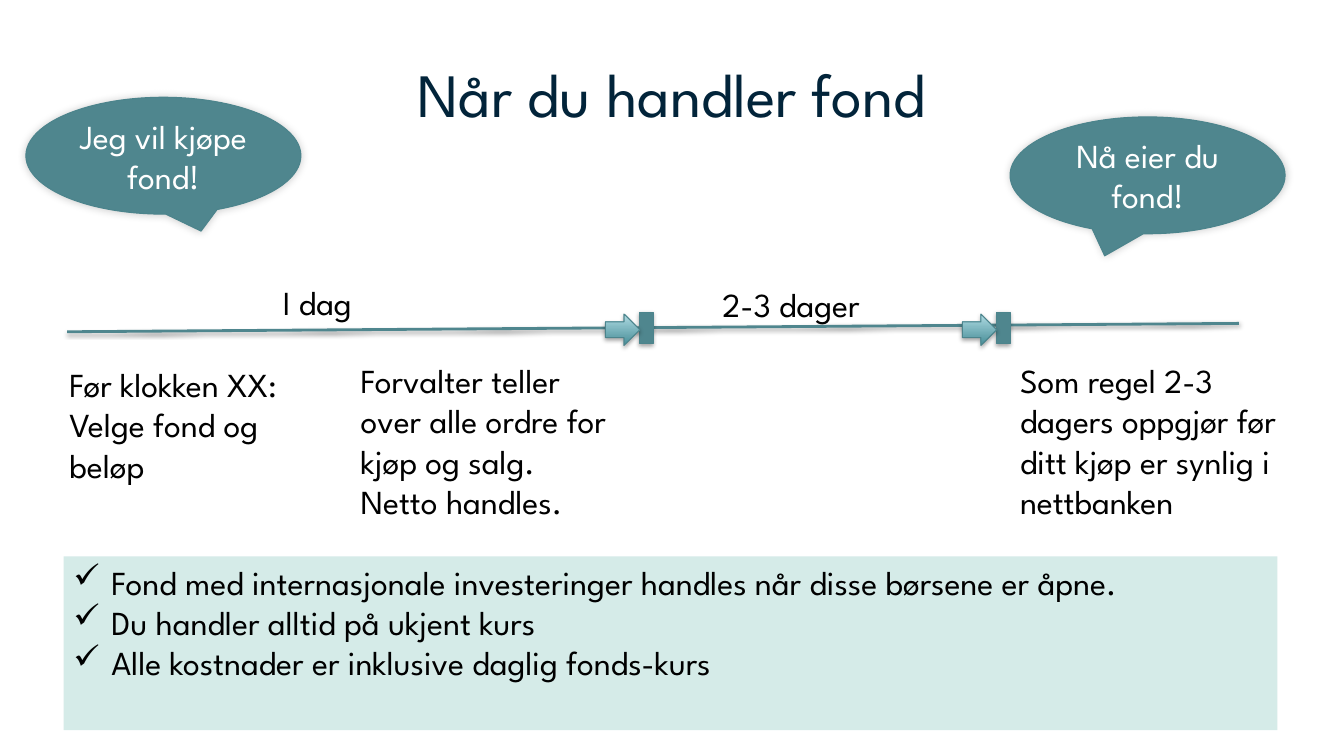
from lxml.etree import SubElement
from pptx import Presentation
from pptx.dml.color import RGBColor
from pptx.enum.shapes import MSO_CONNECTOR, MSO_SHAPE
from pptx.enum.text import MSO_ANCHOR, PP_ALIGN
from pptx.oxml.ns import qn
from pptx.util import Pt

COLORS = {"navy": "02243A", "teal": "4F868E", "edge": "4C848C", "mint": "D5EBE8",
          "deep": "468D97", "light": "B0DBE3", "black": "000000", "white": "FFFFFF"}
FONT = "League Spartan"


def color(name):
    """Return the named colour."""
    return RGBColor.from_string(COLORS[name])


def write(frame, text, size=24, ink="black", align=PP_ALIGN.LEFT,
          anchor=MSO_ANCHOR.TOP, bullet=None):
    """Fill a text frame with one paragraph for each line of text."""
    frame.word_wrap = True
    frame.vertical_anchor = anchor
    for index, line in enumerate(text.split("\n")):
        para = frame.add_paragraph() if index else frame.paragraphs[0]
        para.alignment = align
        if bullet:
            props = para._p.get_or_add_pPr()
            props.set("marL", str(Pt(27)))
            props.set("indent", str(-Pt(27)))
            SubElement(props, qn("a:buChar"), char=bullet)
        span = para.add_run()
        span.text = line
        span.font.name = FONT
        span.font.size = Pt(size)
        span.font.color.rgb = color(ink)


class Page:
    """Draws styled elements on one slide."""

    def __init__(self, deck):
        """Add a title-only slide to the deck."""
        self.page = deck.slides.add_slide(deck.slide_layouts[5])
        self.shapes = self.page.shapes

    def title(self, text, left, top, width, height):
        """Place and format the title."""
        box = self.shapes.title
        box.left, box.top, box.width, box.height = map(Pt, (left, top, width, height))
        write(box.text_frame, text, size=44, ink="navy", align=PP_ALIGN.CENTER,
              anchor=MSO_ANCHOR.MIDDLE)

    def shadow(self, item, opacity, blur, distance, angle):
        """Give an item a soft black shadow."""
        effects = SubElement(item._element.spPr, qn("a:effectLst"))
        outer = SubElement(effects, qn("a:outerShdw"), blurRad=str(Pt(blur)),
                           dist=str(Pt(distance)), dir=str(angle * 60000),
                           rotWithShape="0")
        black = SubElement(outer, qn("a:srgbClr"), val=COLORS["black"])
        SubElement(black, qn("a:alpha"), val=str(opacity * 1000))

    def line(self, start, end):
        """Draw the timeline."""
        line = self.shapes.add_connector(MSO_CONNECTOR.STRAIGHT, *map(Pt, start + end))
        line.line.color.rgb = color("teal")
        line.line.width = Pt(2)
        self.shadow(line, 38, 3.1, 1.6, 90)

    def shape(self, kind, left, top, width, height):
        """Draw an outlined teal shape."""
        shape = self.shapes.add_shape(kind, *map(Pt, (left, top, width, height)))
        shape.fill.solid()
        shape.fill.fore_color.rgb = color("teal")
        shape.line.color.rgb = color("edge")
        shape.line.width = Pt(0.75)
        return shape

    def marker(self, left, top):
        """Draw a stop on the timeline."""
        self.shadow(self.shape(MSO_SHAPE.RECTANGLE, left, top, 9.5, 22.5), 35, 3.1, 1.8, 90)

    def arrow(self, left, top):
        """Draw a block arrow with a gradient."""
        arrow = self.shape(MSO_SHAPE.RIGHT_ARROW, left, top, 24.5, 22.5)
        arrow.fill.gradient()
        arrow.fill.gradient_angle = 90
        for stop, name, position in zip(arrow.fill.gradient_stops, ("deep", "light"), (0, 1)):
            stop.color.rgb = color(name)
            stop.position = position
        self.shadow(arrow, 35, 3.1, 1.8, 90)

    def callout(self, text, left, top, tail):
        """Draw a speech bubble whose tail ends at the given offset."""
        bubble = self.shape(MSO_SHAPE.OVAL_CALLOUT, left, top, 196.5, 83.5)
        bubble.adjustments[0], bubble.adjustments[1] = tail
        self.shadow(bubble, 20, 6, 0, 315)
        write(bubble.text_frame, text, ink="white", align=PP_ALIGN.CENTER,
              anchor=MSO_ANCHOR.MIDDLE)

    def text(self, text, left, top, width, height):
        """Add a plain text box."""
        box = self.shapes.add_textbox(*map(Pt, (left, top, width, height)))
        write(box.text_frame, text)

    def panel(self, text, left, top, width, height):
        """Draw a tinted panel with a checklist."""
        panel = self.shapes.add_shape(MSO_SHAPE.RECTANGLE, *map(Pt, (left, top, width, height)))
        panel.shadow.inherit = False
        panel.fill.solid()
        panel.fill.fore_color.rgb = color("mint")
        panel.line.fill.background()
        write(panel.text_frame, text, bullet="✓")


def main():
    """Build and save the deck."""
    deck = Presentation()
    deck.slide_width, deck.slide_height = Pt(960), Pt(540)
    page = Page(deck)
    page.title("Når du handler fond", 48, 21.6, 864, 90)
    page.line((48, 237), (885, 231))
    for left in (712, 457):
        page.marker(left, 223)
    page.callout("Jeg vil kjøpe fond!", 18.5, 69.5, (0.137, 0.645))
    page.text("I dag", 195, 198, 86.5, 36)
    page.text("Før klokken XX:\nVelge fond og beløp", 42.5, 256.5, 196.5, 94.5)
    page.text("Forvalter teller over alle ordre for kjøp og salg. Netto handles.",
              250.5, 253.5, 196.5, 124)
    page.text("Som regel 2-3 dagers oppgjør før ditt kjøp er synlig i nettbanken",
              721.5, 253.5, 218, 124)
    page.text("2-3 dager", 509, 199.5, 183.5, 36)
    page.panel("Fond med internasjonale investeringer handles når disse børsene er åpne.\n"
               "Du handler alltid på ukjent kurs\n"
               "Alle kostnader er inklusive daglig fonds-kurs", 45.4, 397.5, 867, 124)
    for left in (432.5, 687.5):
        page.arrow(left, 224.3)
    page.callout("Nå eier du fond!", 721.5, 83.5, (-0.156, 0.689))
    deck.save("out.pptx")


if __name__ == "__main__":
    main()
